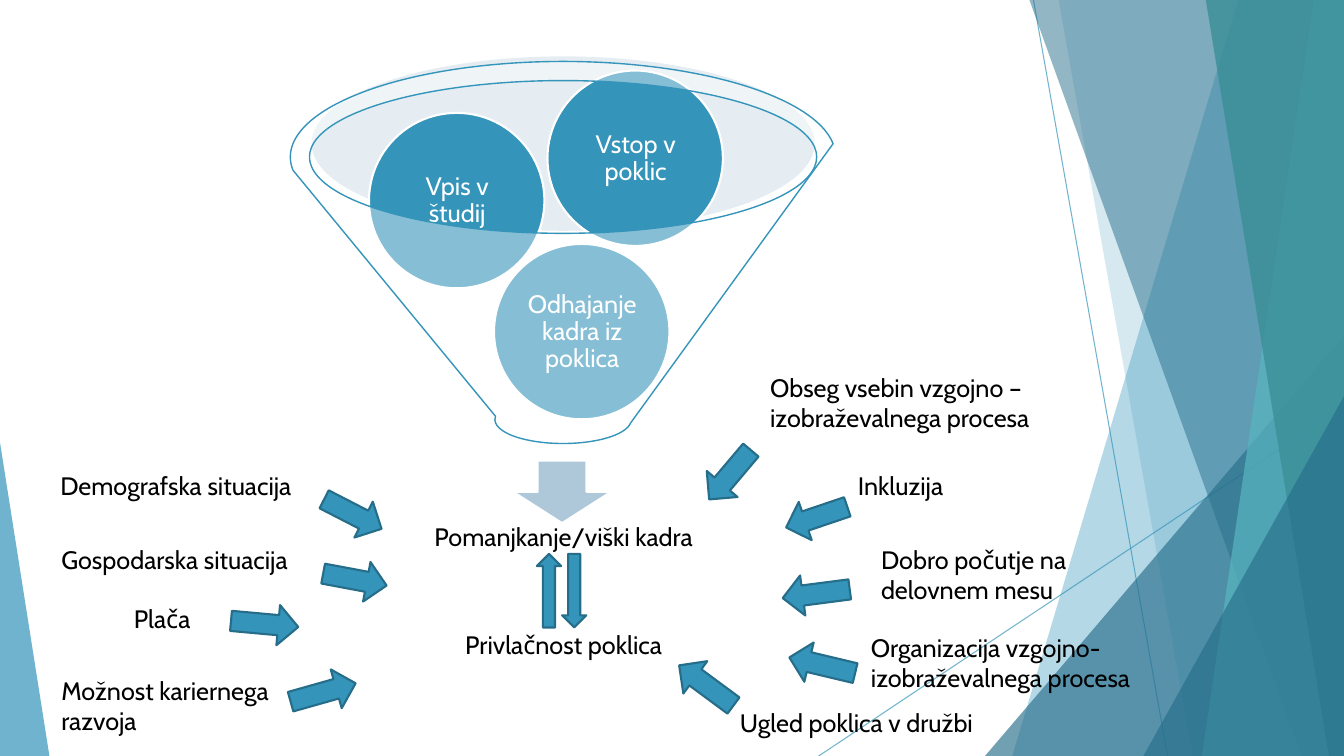
import pptx
import pptx.dml.color
import pptx.enum.dml
import pptx.enum.shapes
import pptx.enum.text
import pptx.oxml.ns
import pptx.util
import lxml.etree

SHAPES = pptx.enum.shapes.MSO_SHAPE
ALIGN = pptx.enum.text.PP_ALIGN
ANCHOR = pptx.enum.text.MSO_ANCHOR
AUTO_SIZE = pptx.enum.text.MSO_AUTO_SIZE
COLOURS = {
    "blue": "3494BA", "deep": "276F8B", "edge": "266D8A", "teal": "58B6C0",
    "sea": "3A8F98", "mist": "BFD2E0", "pale": "AEC8D9",
    "white": "FFFFFF", "black": "000000",
}


def length(inches):
    return pptx.util.Cm(inches * 2.54)


class FunnelSlide:
    font = {"name": "Cabin", "size": pptx.util.Pt(18)}
    label_frame = {"word_wrap": True, "auto_size": AUTO_SIZE.SHAPE_TO_FIT_TEXT}

    def __init__(self, deck):
        self.slide = deck.slides.add_slide(deck.slide_layouts[6])
        self.shapes = self.slide.shapes

    def apply(self, target, values):
        for name, value in values.items():
            setattr(target, name, value)

    def colour(self, fill, colour, opacity=100):
        fill.solid()
        fill.fore_color.rgb = pptx.dml.color.RGBColor.from_string(COLOURS[colour])
        if opacity < 100:
            for tint in fill._xPr.iter(pptx.oxml.ns.qn("a:srgbClr")):
                alpha = lxml.etree.SubElement(tint, pptx.oxml.ns.qn("a:alpha"))
                alpha.set("val", str(opacity * 1000))

    def paint(self, shape, colour, opacity, outline):
        shape.shadow.inherit = False
        self.colour(shape.fill, colour, opacity)
        if outline:
            outline_colour, weight = outline
            self.colour(shape.line.fill, outline_colour)
            shape.line.width = pptx.util.Pt(weight)
        else:
            shape.line.fill.background()

    def preset(self, kind, box, colour, opacity=100, outline=None, turn=0, apex=None):
        shape = self.shapes.add_shape(kind, *map(length, box))
        self.paint(shape, colour, opacity, outline)
        shape.rotation = turn
        if apex is not None:
            shape.adjustments[0] = apex

    def facet(self, points, colour, opacity):
        start, *rest = [tuple(map(length, point)) for point in points]
        outline = self.shapes.build_freeform(*start)
        outline.add_line_segments(rest, close=True)
        self.paint(outline.convert_to_shape(), colour, opacity, None)

    def ray(self, start, end):
        ray = self.shapes.add_connector(
            pptx.enum.shapes.MSO_CONNECTOR.STRAIGHT, *map(length, start + end))
        self.colour(ray.line.fill, "blue", 70)
        ray.line.width = pptx.util.Pt(0.75)
        lxml.etree.SubElement(ray._element.spPr, pptx.oxml.ns.qn("a:effectLst"))

    def text(self, box, lines, colour="black", frame_format=label_frame, paragraph_format={}, gap=0):
        frame = self.shapes.add_textbox(*map(length, box)).text_frame
        self.apply(frame, frame_format)
        for index, line in enumerate(lines):
            paragraph = frame.add_paragraph() if index else frame.paragraphs[0]
            self.apply(paragraph, paragraph_format)
            if index:
                paragraph.space_before = pptx.util.Pt(gap)
            run = paragraph.add_run()
            run.text = line
            self.apply(run.font, self.font)
            self.colour(run.font.fill, colour)

    def centred(self, box, lines, colour, inset, gap=0):
        sides = ("margin_left", "margin_top", "margin_right", "margin_bottom")
        frame_format = {"word_wrap": True, "vertical_anchor": ANCHOR.MIDDLE}
        frame_format.update(dict.fromkeys(sides, length(inset)))
        paragraph_format = {"alignment": ALIGN.CENTER, "line_spacing": 0.9}
        self.text(box, lines, colour, frame_format, paragraph_format, gap)

    def ball(self, left, top, caption):
        self.preset(SHAPES.OVAL, (left, top, 1.74, 1.74), "blue", outline=("white", 1.5))
        self.centred((left + 0.26, top + 0.26, 1.23, 1.23), [caption], "white", 0.03)

    def arrow(self, left, top, width, height, turn):
        self.preset(SHAPES.RIGHT_ARROW, (left, top, width, height), "blue",
                    outline=("edge", 1.5), turn=turn)


def main():
    deck = pptx.Presentation()
    deck.slide_width, deck.slide_height = length(13.33), length(7.5)
    page = FunnelSlide(deck)

    page.ray((10.25, 0), (11.58, 7.5))
    page.ray((13.33, 4.03), (8.12, 7.5))

    def facets(bands):
        for top_left, bottom_left, colour, opacity in bands:
            corners = [(top_left, 0), (13.33, 0), (13.33, 7.5), (bottom_left, 7.5)]
            page.facet(corners, colour, opacity)

    def wedge(box, colour, opacity, apex):
        page.preset(SHAPES.ISOSCELES_TRIANGLE, box, colour, opacity, apex=apex)

    facets([(12.28, 10.04, "blue", 36), (10.5, 11.83, "blue", 20)])
    wedge((9.77, 3.33, 3.56, 4.17), "deep", 66, 1)
    facets([
        (10.21, 12.91, "deep", 50),
        (13.03, 11.92, "teal", 70),
        (11.96, 13.18, "sea", 80),
    ])
    wedge((11.34, 3.93, 1.99, 3.57), "deep", 66, 1)
    wedge((0, 4.39, 0.49, 3.11), "blue", 70, 0)

    page.preset(SHAPES.OVAL, (3.09, 0.56, 4.99, 1.73), "mist", 40)
    page.preset(SHAPES.DOWN_ARROW, (5.09, 4.57, 0.97, 0.62), "pale", outline=("white", 1.5))
    page.centred((2.35, 5.27, 6.48, 1.21),
                 ["Pomanjkanje/viški kadra", "Privlačnost poklica"], "black", 0.14, gap=57.4)
    for left, top, caption in [
        (4.9, 2.42, "Odhajanje kadra iz poklica"),
        (3.66, 1.12, "Vpis v študij"),
        (5.43, 0.7, "Vstop v poklic"),
    ]:
        page.ball(left, top, caption)
    page.preset(SHAPES.FUNNEL, (2.88, 0.61, 5.41, 3.79), "white", 40, ("blue", 1))

    for left, top, width, height, factor in [
        (0.5, 4.62, 3.15, 0.4, "Demografska situacija"),
        (0.51, 5.35, 2.69, 0.4, "Gospodarska situacija"),
        (1.23, 5.94, 0.99, 0.4, "Plača"),
        (0.51, 6.65, 2.46, 0.71, "Možnost kariernega razvoja"),
        (7.54, 3.64, 3.8, 0.71, "Obseg vsebin vzgojno – izobraževalnega procesa"),
        (8.41, 4.62, 1.24, 0.4, "Inkluzija"),
        (8.64, 5.35, 2.74, 0.71, "Dobro počutje na delovnem mesu"),
        (8.54, 6.22, 3.07, 0.71, "Organizacija vzgojno-izobraževalnega procesa"),
        (7.24, 6.97, 3.16, 0.4, "Ugled poklica v družbi"),
    ]:
        page.text((left, top, width, height), [factor])

    for left, top, width, turn in [
        (6.92, 4.51, 0.64, 130.2),
        (7.78, 4.93, 0.64, 161.3),
        (3.18, 4.9, 0.64, 27.2),
        (3.2, 5.55, 0.64, 10.6),
        (2.29, 5.99, 0.67, 5.2),
        (7.76, 5.69, 0.67, 172.6),
        (2.87, 6.67, 0.67, 344.2),
        (7.82, 6.4, 0.67, 193.4),
        (6.67, 6.6, 0.67, 216.5),
    ]:
        page.arrow(left, top, width, 0.4, turn)
    for left, turn in [(5.33, 90), (5.08, 270)]:
        page.arrow(left, 5.74, 0.73, 0.24, turn)

    deck.save("out.pptx")


if __name__ == "__main__":
    main()
